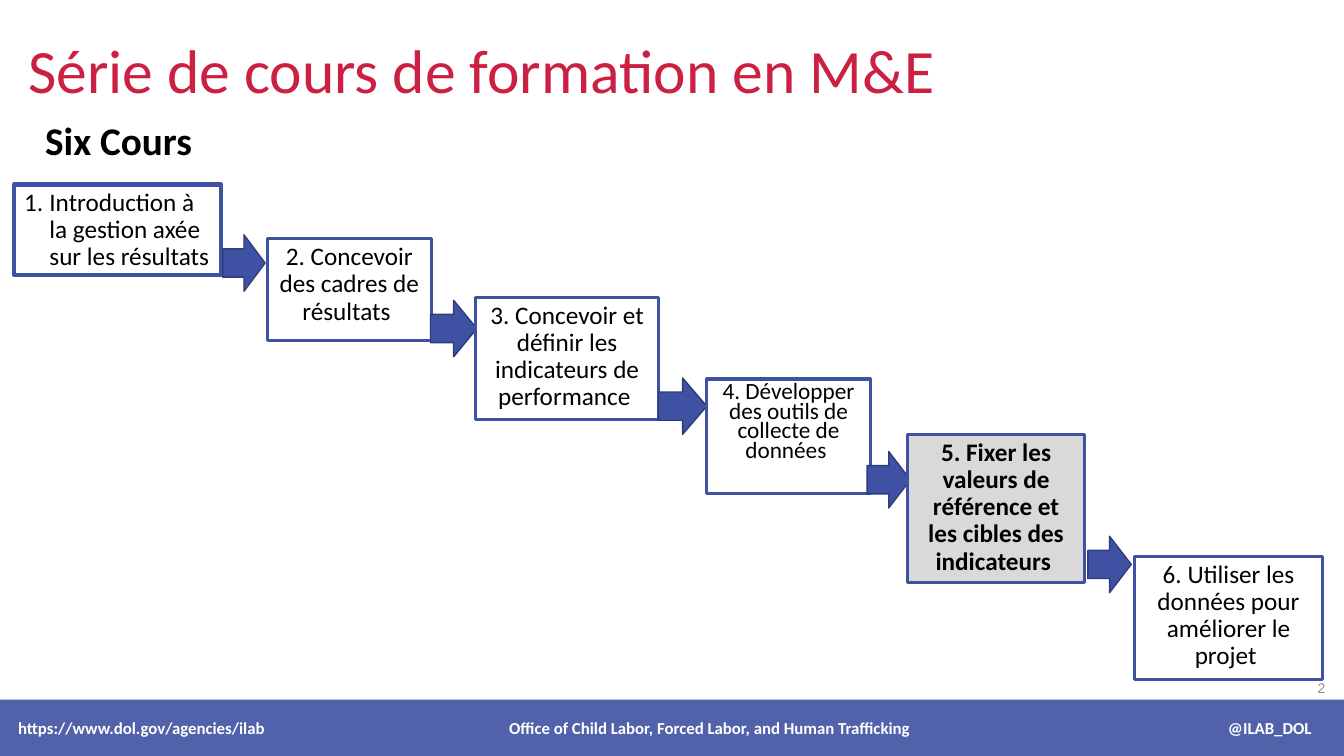
from dataclasses import dataclass

from lxml.etree import SubElement as Sub
from pptx import Presentation
from pptx.dml.color import RGBColor as RGB
from pptx.enum.shapes import MSO_SHAPE as Form
from pptx.enum.text import MSO_ANCHOR as Anchor, MSO_AUTO_SIZE as Fit, PP_ALIGN as Align
from pptx.oxml.ns import qn
from pptx.util import Inches, Pt


@dataclass(frozen=True)
class Theme:
    font: str = "Calibri"
    small: str = "Arial"
    red: str = "CB2042"
    blue: str = "3F51A2"
    navy: str = "2F3C78"
    black: str = "000000"
    white: str = "FFFFFF"
    shade: str = "D9D9D9"
    gray: str = "8C8C8C"
    head: float = 44
    sub: float = 28
    text: float = 18
    tight: float = 16.6
    foot: float = 12
    page: float = 10


def write(shape, text, size, color, font, bold=False, align=Align.LEFT,
          anchor=Anchor.TOP, space=1.0, wrap=True):
    """Put formatted text in a shape and return its paragraph."""
    frame = shape.text_frame
    frame.word_wrap = wrap
    frame.auto_size = Fit.NONE
    frame.vertical_anchor = anchor
    para = frame.paragraphs[0]
    para.alignment = align
    para.line_spacing = space
    para.space_before = Pt(0)
    run = para.add_run()
    run.text = text
    run.font.name, run.font.size, run.font.bold = font, Pt(size), bold
    run.font.color.rgb = RGB.from_string(color)
    return para


class Board:
    def __init__(self, slide, theme):
        self.slide, self.theme = slide, theme

    def place(self, shape, box):
        shape.left, shape.top, shape.width, shape.height = map(Inches, box)
        return shape

    def paint(self, shape, fill, line=None, width=1):
        shape.fill.solid()
        shape.fill.fore_color.rgb = RGB.from_string(fill)
        if line:
            shape.line.color.rgb = RGB.from_string(line)
            shape.line.width = Pt(width)
        else:
            shape.line.fill.background()

    def form(self, kind, box, fill, line=None, width=1):
        shape = self.slide.shapes.add_shape(kind, *map(Inches, box))
        shape.shadow.inherit = False
        self.paint(shape, fill, line, width)
        return shape

    def title(self, text, box):
        t = self.theme
        write(self.place(self.slide.shapes.title, box), text, t.head, t.red,
              t.font, anchor=Anchor.MIDDLE, space=0.9)

    def label(self, text, box, size, color, font, **style):
        shape = self.slide.shapes.add_textbox(*map(Inches, box))
        write(shape, text, size, color, font, **style)

    def first(self, text, box):
        t = self.theme
        body = self.place(self.slide.placeholders[1], box)
        self.paint(body, t.white, t.blue, 3)
        para = write(body, text, t.text, t.black, t.font, space=0.9)
        props = para._p.get_or_add_pPr()
        props.set("marL", str(Inches(0.25)))
        props.set("indent", str(-Inches(0.25)))
        Sub(props, qn("a:buFont"), typeface="+mj-lt")
        Sub(props, qn("a:buAutoNum"), type="arabicPeriod")

    def step(self, text, box, size=None, space=0.9, active=False):
        t = self.theme
        fill = t.shade if active else t.white
        shape = self.form(Form.RECTANGLE, box, fill, t.blue, 2.25)
        write(shape, text, size or t.text, t.black, t.font, bold=active,
              align=Align.CENTER, space=space)

    def arrow(self, left, top, width):
        t = self.theme
        self.form(Form.RIGHT_ARROW, (left, top, width, 0.56), t.blue, t.navy)

    def footer(self, parts, box, stops):
        t = self.theme
        bar = self.form(Form.RECTANGLE, box, t.blue)
        color = bar.fill._xPr.find(qn("a:solidFill"))[0]
        Sub(color, qn("a:alpha"), val="90000")
        bar.text_frame.margin_left = Inches(0.22)
        para = write(bar, "\t".join(parts), t.foot, t.white, t.font,
                     bold=True, anchor=Anchor.MIDDLE)
        tabs = Sub(para._p.get_or_add_pPr(), qn("a:tabLst"))
        for spot, side in stops:
            Sub(tabs, qn("a:tab"), pos=str(Inches(spot)), algn=side)


def main():
    deck = Presentation()
    deck.slide_width, deck.slide_height = Inches(13.33), Inches(7.5)
    t = Theme()
    board = Board(deck.slides.add_slide(deck.slide_layouts[1]), t)

    # Headings and page number
    board.title("Série de cours de formation en M&E", (0.18, 0, 11.5, 1.45))
    board.label("Six Cours", (0.35, 1.1, 1.68, 0.57), t.sub, t.black, t.font,
                bold=True, wrap=False)
    board.label("2", (12.97, 6.62, 0.36, 0.4), t.page, t.gray, t.small,
                anchor=Anchor.MIDDLE)

    # Staircase of courses, each reached by an arrow
    board.first("Introduction à la gestion axée sur les résultats",
                (0.14, 1.83, 2.05, 0.9))
    steps = [
        ((2.21, 2.33, 0.42), "2. Concevoir des cadres de résultats ",
         (2.65, 2.37, 1.63, 1.01), {}),
        ((4.27, 2.98, 0.46), "3. Concevoir et définir les indicateurs de performance ",
         (4.72, 2.95, 1.81, 1.21), {}),
        ((6.53, 3.75, 0.48), "4. Développer des outils de collecte de données ",
         (7.01, 3.76, 1.62, 1.14), dict(size=t.tight, space=0.7)),
        ((8.6, 4.48, 0.43), "5. Fixer les valeurs de référence et les cibles des indicateurs ",
         (9, 4.31, 1.76, 1.47), dict(active=True)),
        ((10.79, 5.32, 0.43), "6. Utiliser les données pour améliorer le projet ",
         (11.25, 5.52, 1.87, 1.22), {}),
    ]
    for arrow, text, box, style in steps:
        board.arrow(*arrow)
        board.step(text, box, **style)

    # Footer band
    board.footer(("https://www.dol.gov/agencies/ilab",
                  "Office of Child Labor, Forced Labor, and Human Trafficking",
                  "@ILAB_DOL"),
                 (-0.04, 6.94, 13.37, 0.56), ((6.86, "ctr"), (12.83, "r")))

    deck.save("out.pptx")


if __name__ == "__main__":
    main()
